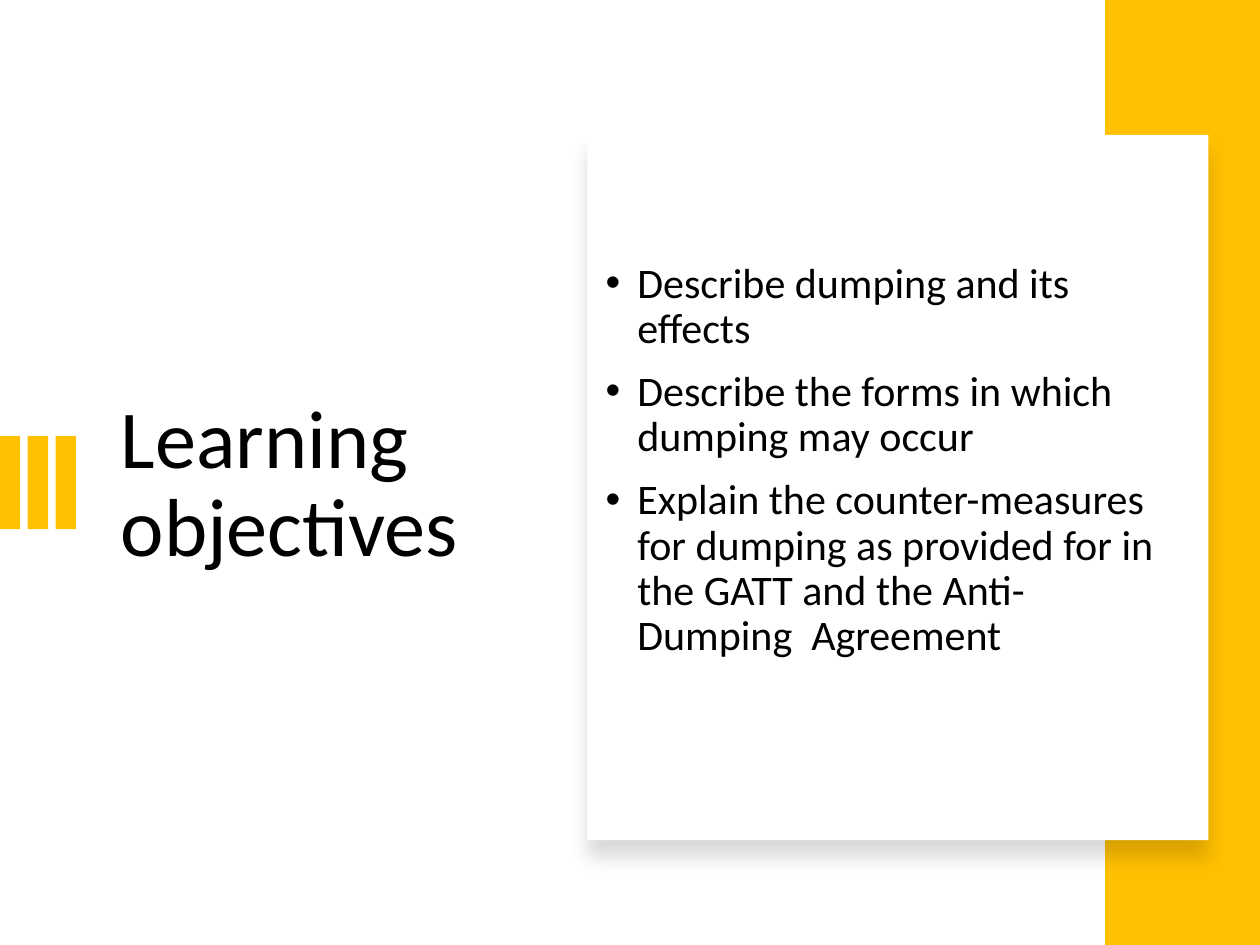
"""Build the learning objectives slide with python-pptx."""
from dataclasses import dataclass

from lxml import etree
from pptx import Presentation
from pptx.dml.color import RGBColor
from pptx.enum import shapes, text
from pptx.oxml import ns
from pptx.util import Cm, Pt

GOLD, WHITE, BLACK = "FFC000", "FFFFFF", "000000"
FONT = "Calibri"
GOALS = [
    "Describe dumping and its effects",
    "Describe the forms in which dumping may occur",
    "Explain the counter-measures for dumping as provided for in the GATT"
    " and the Anti-Dumping  Agreement",
]


@dataclass
class Box:
    x: float
    y: float
    w: float
    h: float

    def place(self) -> tuple:
        return Cm(self.x), Cm(self.y), Cm(self.w), Cm(self.h)


def paint(item, color: str) -> None:
    item.rgb = RGBColor.from_string(color)


def add_rect(parent, box: Box, color: str):
    rect = parent.add_shape(shapes.MSO_SHAPE.RECTANGLE, *box.place())
    rect.fill.solid()
    paint(rect.fill.fore_color, color)
    rect.line.fill.background()
    rect.shadow.inherit = False
    return rect


def add_shadow(rect) -> None:
    effects = rect._element.spPr.find(ns.qn("a:effectLst"))
    outer = etree.SubElement(
        effects, ns.qn("a:outerShdw"), blurRad=str(Pt(11)),
        dist=str(Pt(10)), dir="5400000", algn="t", rotWithShape="0")
    color = etree.SubElement(outer, ns.qn("a:srgbClr"), val=BLACK)
    etree.SubElement(color, ns.qn("a:alpha"), val="15000")


def style(para, size: float) -> None:
    para.alignment = text.PP_ALIGN.LEFT
    para.line_spacing = 0.9
    for run in para.runs:
        run.font.name = FONT
        run.font.size = Pt(size)
        paint(run.font.color, BLACK)


def add_bullet(para) -> None:
    props = para._p.get_or_add_pPr()
    props.set("marL", str(Cm(0.64)))
    props.set("indent", str(-Cm(0.64)))
    etree.SubElement(props, ns.qn("a:buFont"), typeface="Arial")
    etree.SubElement(props, ns.qn("a:buChar"), char="•")


def set_frame(frame) -> None:
    frame.word_wrap = True
    frame.auto_size = text.MSO_AUTO_SIZE.NONE
    frame.vertical_anchor = text.MSO_ANCHOR.MIDDLE


def add_title(slide, box: Box) -> None:
    title = slide.shapes.title
    title.left, title.top, title.width, title.height = box.place()
    frame = title.text_frame
    frame.text = "Learning objectives"
    set_frame(frame)
    style(frame.paragraphs[0], 47)


def add_goals(slide, box: Box) -> None:
    frame = slide.shapes.add_textbox(*box.place()).text_frame
    frame.text = "\n".join(GOALS)
    set_frame(frame)
    frame.margin_bottom = Cm(1.13)
    for para in frame.paragraphs:
        style(para, 24)
        para.space_before = Pt(10)
        add_bullet(para)


def main() -> None:
    deck = Presentation()
    deck.slide_width, deck.slide_height = Cm(25.4), Cm(19.05)
    slide = deck.slides.add_slide(deck.slide_layouts[5])
    add_title(slide, Box(2.18, 3.71, 8.1, 12.17))
    bars = slide.shapes.add_group_shape()
    for i in range(3):
        add_rect(bars.shapes, Box(i * 0.56, 8.79, 0.41, 1.88), GOLD)
    add_rect(slide.shapes, Box(22.28, 0, 3.12, 19.05), GOLD)
    card = add_rect(slide.shapes, Box(11.84, 2.72, 12.52, 14.22), WHITE)
    add_shadow(card)
    add_goals(slide, Box(11.96, 3.71, 11.68, 12.17))
    deck.save("out.pptx")


if __name__ == "__main__":
    main()
